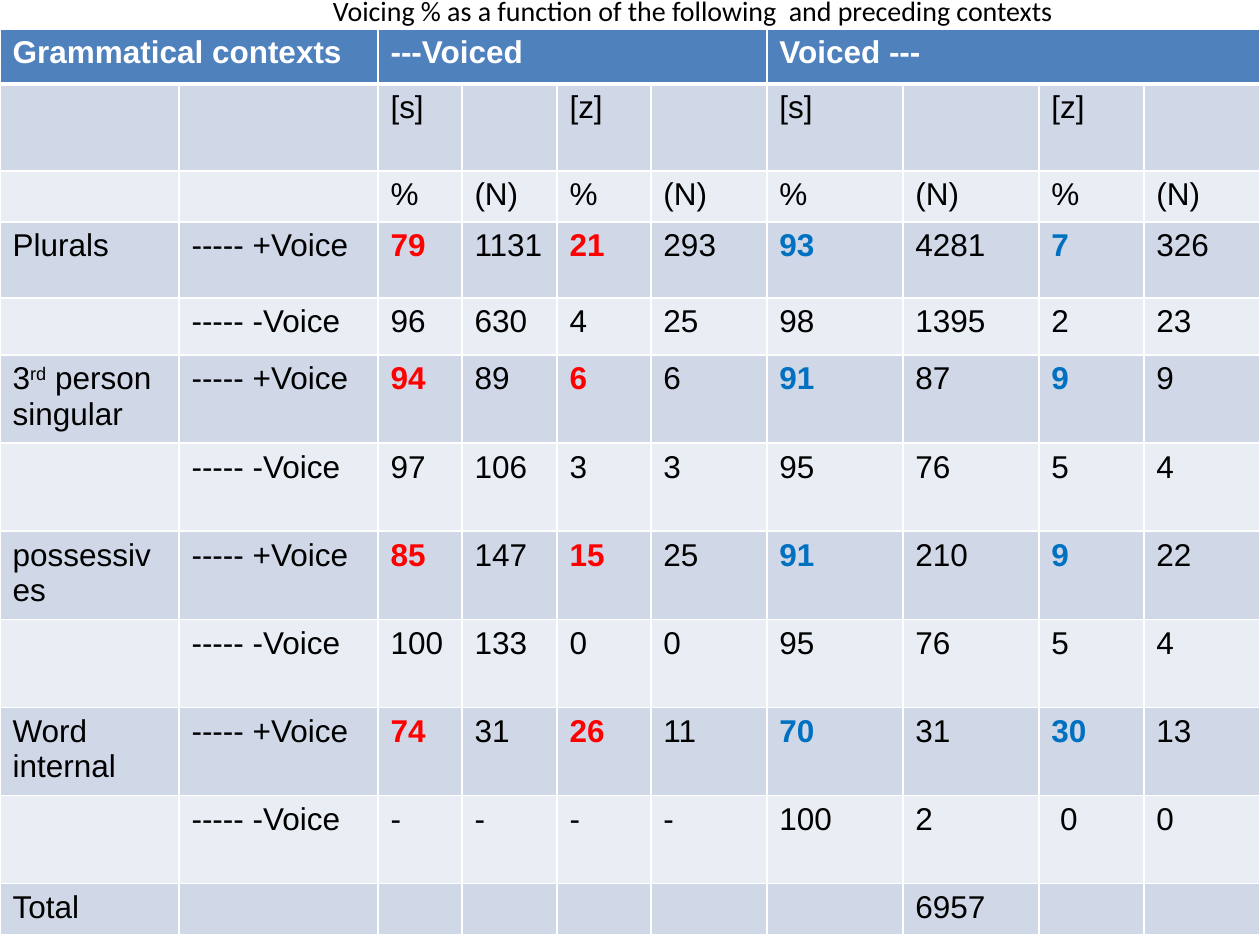
from lxml import etree
from pptx import Presentation
from pptx import util as u
from pptx.dml.color import RGBColor
from pptx.enum import text
from pptx.oxml.ns import qn

SCALE = 914400 / 126  # EMU per px
BLACK, WHITE, RED, BLUE = "000000", "FFFFFF", "FF0000", "0070C0"
HEADER, DARK_BAND, LIGHT_BAND = "4F81BD", "D0D8E8", "E9EDF4"

COLUMN_WIDTHS = [179, 199, 84, 95, 94, 116, 136, 136, 105, 116]
ROW_HEIGHTS = [55, 87, 51, 76, 57, 87, 88, 82, 88, 87, 88, 51]
HEADER_SPANS = [(0, 1), (2, 5), (6, 9)]  # first and last column
HIGHLIGHTS = {2: RED, 4: RED, 6: BLUE, 8: BLUE}
PLUS, MINUS = "----- +Voice", "----- -Voice"
ORDINAL = ("3", "^rd", " person singular")  # ^ marks a raised span

ROWS = [
    ["Grammatical contexts", "", "---Voiced", "", "", "", "Voiced ---", "", "", ""],
    ["", ""] + ["[s]", "", "[z]", ""] * 2,
    ["", ""] + ["%", "(N)"] * 4,
    ["Plurals", PLUS, "79", "1131", "21", "293", "93", "4281", "7", "326"],
    ["", MINUS, "96", "630", "4", "25", "98", "1395", "2", "23"],
    [ORDINAL, PLUS, "94", "89", "6", "6", "91", "87", "9", "9"],
    ["", MINUS, "97", "106", "3", "3", "95", "76", "5", "4"],
    ["possessives", PLUS, "85", "147", "15", "25", "91", "210", "9", "22"],
    ["", MINUS, "100", "133", "0", "0", "95", "76", "5", "4"],
    ["Word internal", PLUS, "74", "31", "26", "11", "70", "31", "30", "13"],
    ["", MINUS, "-", "-", "-", "-", "100", "2", " 0", "0"],
    ["Total", "", "", "", "", "", "", "6957", "", ""],
]


def px(length):
    return u.Emu(round(length * SCALE))


def color(value):
    return RGBColor.from_string(value)


class Slide:
    """Table and text style, together with the current page."""

    table_font, title_font = "Arial", "Calibri"
    table_size, title_size = 18, 16

    def __init__(self, page):
        self.page = page

    def add_span(self, para, words, font, size, ink, bold=False):
        span = para.add_run()
        span.text = words.lstrip("^")
        span.font.name = font
        span.font.size = u.Pt(size)
        span.font.bold = bold
        span.font.color.rgb = color(ink)
        if words.startswith("^"):
            span._r.get_or_add_rPr().set("baseline", "30000")

    def title(self, words, left, top, width, height):
        box = self.page.shapes.add_textbox(px(left), px(top), px(width), px(height))
        frame = box.text_frame
        frame.word_wrap = True
        frame.vertical_anchor = text.MSO_ANCHOR.MIDDLE
        para = frame.paragraphs[0]
        para.alignment = text.PP_ALIGN.CENTER
        self.add_span(para, words, self.title_font, self.title_size, BLACK)

    def borders(self, cell, bottom):
        properties = cell._tc.get_or_add_tcPr()
        widths = {"lnL": 1, "lnR": 1, "lnT": 1, "lnB": bottom}
        for place, (side, width) in enumerate(widths.items()):
            line = etree.Element(qn(f"a:{side}"), w=str(u.Pt(width)))
            fill = etree.SubElement(line, qn("a:solidFill"))
            etree.SubElement(fill, qn("a:srgbClr"), val=WHITE)
            properties.insert(place, line)

    def cell(self, cell, content, fill, ink, bold, bottom):
        cell.fill.solid()
        cell.fill.fore_color.rgb = color(fill)
        self.borders(cell, bottom)
        spans = content if isinstance(content, tuple) else (content,)
        for words in filter(None, spans):
            self.add_span(cell.text_frame.paragraphs[0], words,
                          self.table_font, self.table_size, ink, bold)

    def table(self, rows, left, top, widths, heights):
        frame = self.page.shapes.add_table(
            len(rows), len(widths), px(left), px(top), px(sum(widths)), px(sum(heights)))
        table = frame.table
        for column, width in zip(table.columns, widths):
            column.width = px(width)
        for row, height in zip(table.rows, heights):
            row.height = px(height)
        for first, last in HEADER_SPANS:
            table.cell(0, first).merge(table.cell(0, last))

        for r, row in enumerate(rows):
            for c, content in enumerate(row):
                fill, ink, bold, bottom = LIGHT_BAND, BLACK, False, 1
                if r == 0:
                    fill, ink, bold, bottom = HEADER, WHITE, True, 3
                elif r % 2:
                    fill = DARK_BAND
                if row[1] == PLUS and c in HIGHLIGHTS:
                    ink, bold = HIGHLIGHTS[c], True
                self.cell(table.cell(r, c), content, fill, ink, bold, bottom)


def main():
    deck = Presentation()
    deck.slide_width, deck.slide_height = px(1260), px(945)
    slide = Slide(deck.slides.add_slide(deck.slide_layouts[6]))

    # Title
    slide.title("Voicing % as a function of the following  and preceding contexts",
                126, 0, 1134, 20)
    # Voicing table
    slide.table(ROWS, 0, 29, COLUMN_WIDTHS, ROW_HEIGHTS)

    deck.save("out.pptx")


if __name__ == "__main__":
    main()
